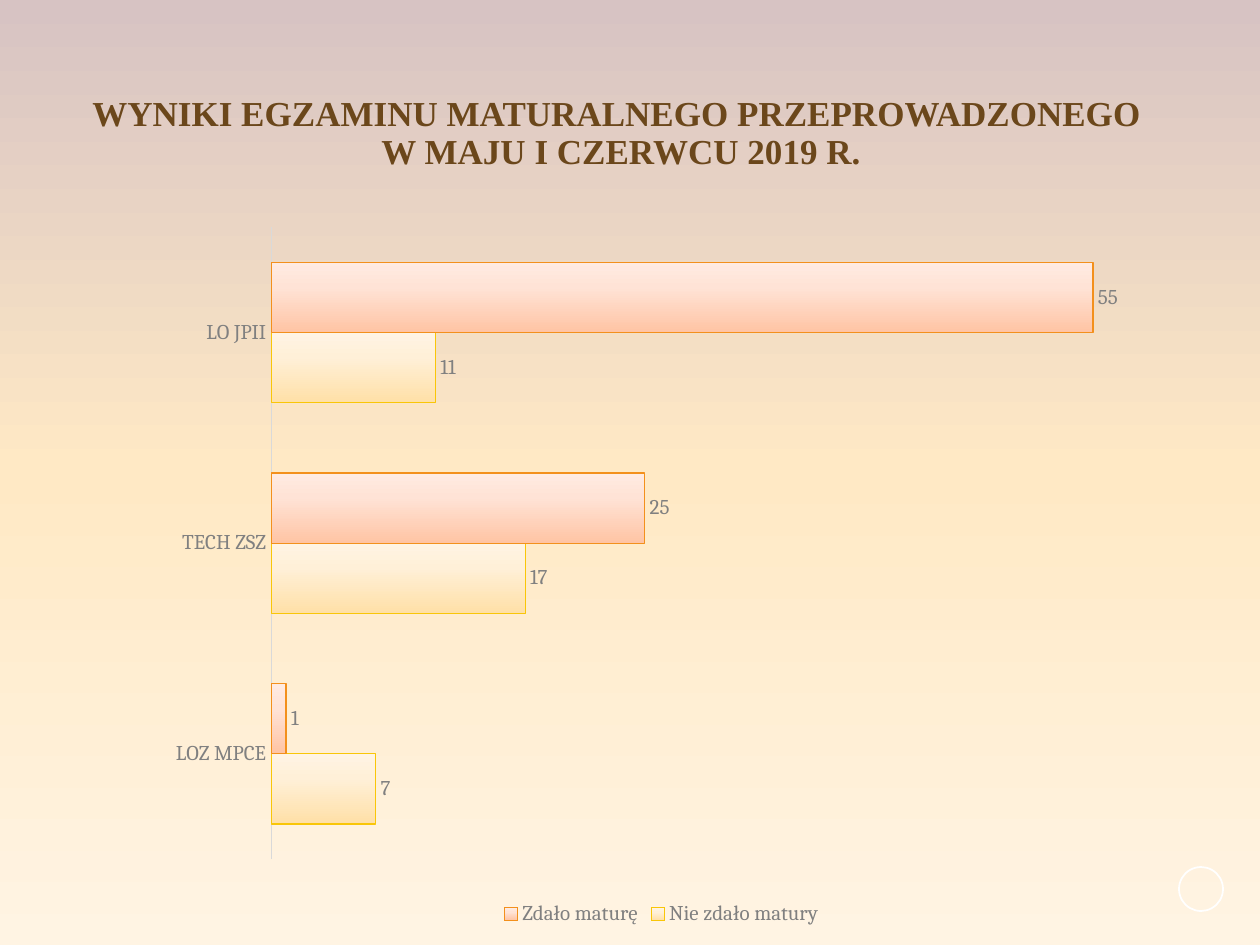
from lxml import etree
from pptx import Presentation, util as u
from pptx.chart.data import CategoryChartData
from pptx.dml.color import RGBColor
from pptx.enum import chart as ch, shapes, text
from pptx.oxml import parse_xml
from pptx.oxml.ns import nsdecls, qn

PX = 914400 / 126
THEME = {
    "title": {"name": "Times New Roman", "size": u.Pt(20), "bold": True, "color": "6B471B"},
    "label": {"name": "Cambria", "size": u.Pt(12), "bold": False, "color": "808080"},
    "background": [(0, "D7C3C3"), (50, "FFE9C5"), (100, "FFF4E3")],
    "failed": [(0, "FFE0A7"), (65, "FFF0D8"), (100, "FFF4E4")],
    "passed": [(0, "FFC4A4"), (65, "FFE3D6"), (100, "FFEBE2")],
    "failed_line": "F9C608",
    "passed_line": "F3901C",
    "axis_line": "D9D9D9",
    "ring": "FFFFFF",
}


def set_font(font, style):
    for key, value in style.items():
        if key == "color":
            font.color.rgb = RGBColor.from_string(value)
        else:
            setattr(font, key, value)


def set_gradient(fill, stops, angle):
    fill.gradient()
    fill.gradient_angle = angle
    stop_list = fill.gradient_stops[0]._gs.getparent()
    for old in list(stop_list):
        stop_list.remove(old)
    for pos, color in stops:
        gs = etree.SubElement(stop_list, qn("a:gs"), pos=str(pos * 1000))
        etree.SubElement(gs, qn("a:srgbClr"), val=color)


prs = Presentation()
prs.slide_width, prs.slide_height = (u.Emu(round(n * PX)) for n in (1260, 945))
s = prs.slides.add_slide(prs.slide_layouts[5])
set_gradient(s.background.fill, THEME["background"], 270)

# Corner ring
box = [u.Emu(round(n * PX)) for n in (1179, 867, 44, 44)]
sp = s.shapes.add_shape(shapes.MSO_SHAPE.OVAL, *box)
sp.shadow.inherit = False
sp.fill.background()
sp.line.color.rgb = RGBColor.from_string(THEME["ring"])
sp.line.width = u.Pt(1)

# Title
title = s.shapes.title
for key, n in {"left": 54, "top": 55, "width": 1134, "height": 158}.items():
    setattr(title, key, u.Emu(round(n * PX)))
tf = title.text_frame
tf.word_wrap = True
tf.auto_size = text.MSO_AUTO_SIZE.NONE
tf.vertical_anchor = text.MSO_ANCHOR.MIDDLE
p = tf.paragraphs[0]
p.text = "WYNIKI EGZAMINU MATURALNEGO PRZEPROWADZONEGO \vW MAJU I CZERWCU 2019 R."
p.alignment = text.PP_ALIGN.CENTER
p.line_spacing = 0.9
for r in p.runs:
    set_font(r.font, THEME["title"])

# Exam results chart
data = CategoryChartData()
data.categories = ["LOZ MPCE", "TECH ZSZ", "LO JPII"]
data.add_series("Nie zdało matury", (7, 17, 11))
data.add_series("Zdało maturę", (1, 25, 55))
box = [u.Emu(round(n * PX)) for n in (134, 213, 1055, 718)]
chart = s.shapes.add_chart(ch.XL_CHART_TYPE.BAR_CLUSTERED, *box, data).chart
set_font(chart.font, THEME["label"])
chart.has_title = False
chart.has_legend = True
chart.legend.position = ch.XL_LEGEND_POSITION.BOTTOM
chart.legend.include_in_layout = False
set_font(chart.legend.font, THEME["label"])

# Axes
axis = chart.category_axis
axis.major_tick_mark = axis.minor_tick_mark = ch.XL_TICK_MARK.NONE
axis.format.line.color.rgb = RGBColor.from_string(THEME["axis_line"])
axis.format.line.width = u.Pt(0.75)
set_font(axis.tick_labels.font, THEME["label"])
values = chart.value_axis
for key, value in {"visible": False, "has_major_gridlines": False,
                   "minimum_scale": 0, "maximum_scale": 60}.items():
    setattr(values, key, value)

# Bars and their values
plot = chart.plots[0]
plot.gap_width = 100
plot.overlap = 0
plot.vary_by_categories = False
for series, name in zip(plot.series, ("failed", "passed")):
    set_gradient(series.format.fill, THEME[name], 90)
    series.format.line.color.rgb = RGBColor.from_string(THEME[name + "_line"])
    series.format.line.width = u.Pt(0.75)
    labels = series.data_labels
    labels.show_value = True
    labels.position = ch.XL_LABEL_POSITION.OUTSIDE_END
    set_font(labels.font, THEME["label"])

# Inner plot area, as fractions of the chart
area = chart._chartSpace.chart.plotArea
for old in area.findall(qn("c:layout")):
    area.remove(old)
modes = '<c:layoutTarget val="inner"/><c:xMode val="edge"/><c:yMode val="edge"/>'
sizes = "".join(f'<c:{k} val="{v}"/>' for k, v in
                {"x": 0.13, "y": 0.02, "w": 0.85, "h": 0.88}.items())
area.insert(0, parse_xml(f'<c:layout {nsdecls("c")}><c:manualLayout>{modes}{sizes}'
                         '</c:manualLayout></c:layout>'))

prs.save("out.pptx")
